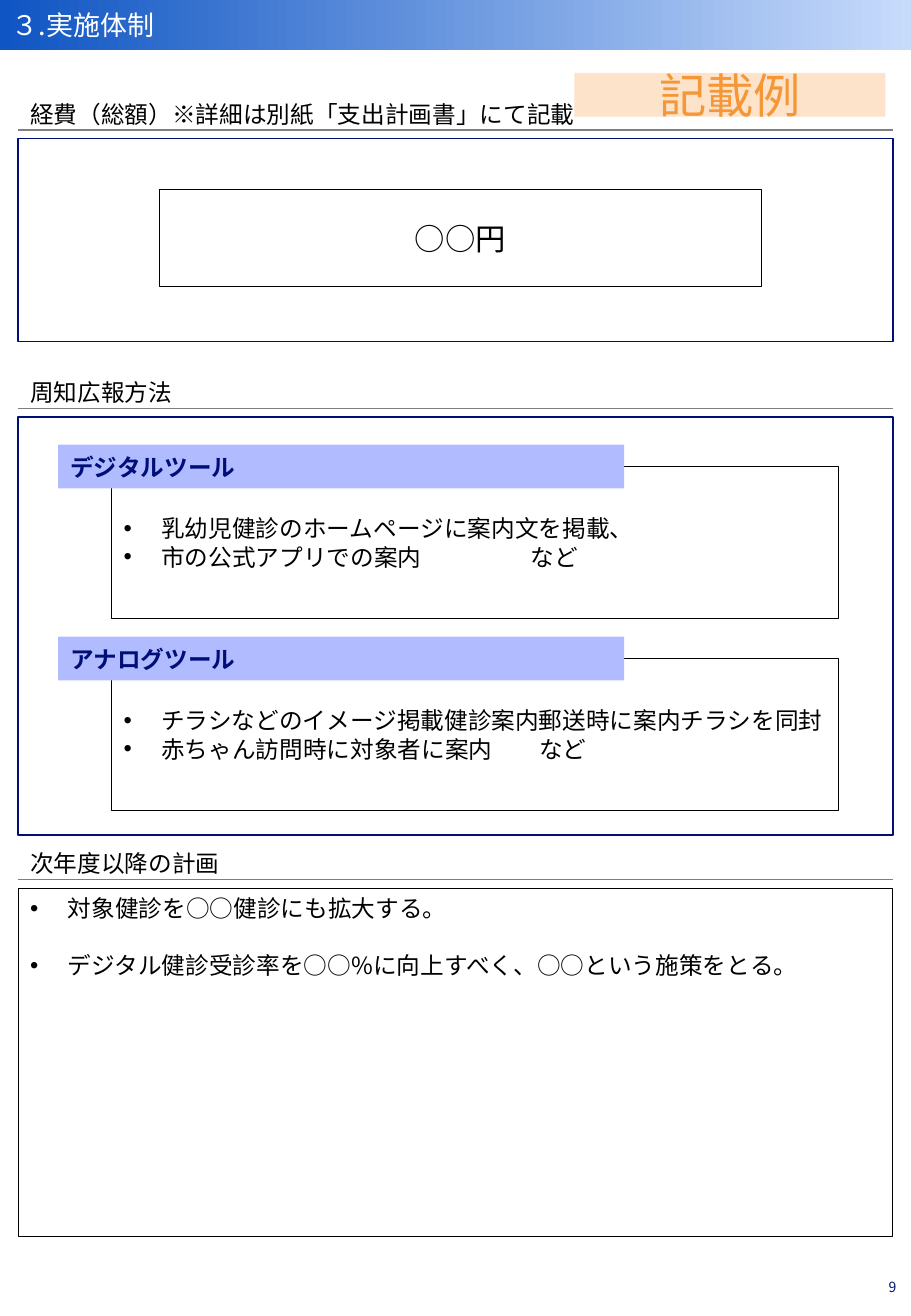
from dataclasses import dataclass

from lxml.etree import SubElement
from pptx import Presentation
from pptx.dml.color import RGBColor
from pptx.enum.shapes import MSO_CONNECTOR as Connector, MSO_SHAPE as Shape
from pptx.enum.text import MSO_ANCHOR as Anchor, PP_ALIGN as Align
from pptx.oxml.ns import qn
from pptx.util import Inches, Pt


@dataclass(frozen=True)
class Theme:
    font: str = "Noto Sans CJK JP"
    black: str = "000000"
    white: str = "FFFFFF"
    navy: str = "000F78"
    gray: str = "7F7F7F"
    lavender: str = "B1BBFF"
    orange: str = "F59637"
    peach: str = "F9C087"
    title_light: str = "C7DBFB"
    title_dark: str = "0F55C3"
    page_size: float = 8.3
    body_size: float = 14
    title_size: float = 16
    amount_size: float = 18
    stamp_size: float = 28


class PlanSlide:
    def __init__(self, presentation, theme):
        self.theme = theme
        self.slide = presentation.slides.add_slide(presentation.slide_layouts[6])

    def fill_text(self, shape, lines, size=None, color=None, bold=False,
                  align=Align.LEFT, anchor=Anchor.MIDDLE, bullet_tab=None, gap=0):
        """Fill a shape with text; bullet_tab makes the lines a bulleted list."""
        frame = shape.text_frame
        frame.word_wrap = True
        frame.vertical_anchor = anchor
        frame.text = "\n".join(lines)
        for index, paragraph in enumerate(frame.paragraphs):
            paragraph.alignment = align
            if index and gap:
                paragraph.space_before = Pt(gap)
            if bullet_tab is not None:
                self.add_bullet(paragraph, bullet_tab)
            for run in paragraph.runs:
                run.font.size = Pt(size or self.theme.body_size)
                run.font.bold = bold
                run.font.color.rgb = RGBColor.from_string(color or self.theme.black)
                run.font.name = self.theme.font
                SubElement(run.font._element, qn("a:ea"), typeface=self.theme.font)
        return frame

    def add_bullet(self, paragraph, tab):
        properties = paragraph._p.get_or_add_pPr()
        properties.set("marL", str(Inches(0.31)))
        properties.set("indent", str(-Inches(0.31)))
        SubElement(properties, qn("a:buFont"), typeface="Arial")
        SubElement(properties, qn("a:buChar"), char="•")
        if tab:
            tabs = SubElement(properties, qn("a:tabLst"))
            SubElement(tabs, qn("a:tab"), pos=str(Inches(tab)), algn="l")

    def box(self, left, top, width, height, fill=None, line=None, weight=0.5):
        shape = self.slide.shapes.add_shape(
            Shape.RECTANGLE, Inches(left), Inches(top), Inches(width), Inches(height))
        shape.shadow.inherit = False
        if fill:
            shape.fill.solid()
            shape.fill.fore_color.rgb = RGBColor.from_string(fill)
        else:
            shape.fill.background()
        if line:
            shape.line.color.rgb = RGBColor.from_string(line)
            shape.line.width = Pt(weight)
        else:
            shape.line.fill.background()
        return shape

    def label(self, left, top, width, height, text, **style):
        shape = self.slide.shapes.add_textbox(
            Inches(left), Inches(top), Inches(width), Inches(height))
        return self.fill_text(shape, [text], **style)

    def title_bar(self, text):
        bar = self.box(0, 0, 7.5, 0.41)
        bar.fill.gradient()
        bar.fill.gradient_angle = 180
        colors = (self.theme.title_light, self.theme.title_dark)
        for stop, color in zip(bar.fill.gradient_stops, colors):
            stop.color.rgb = RGBColor.from_string(color)
        self.fill_text(bar, [text], self.theme.title_size, self.theme.white)

    def heading(self, top, text):
        """Section heading with a rule beneath it."""
        rule = self.slide.shapes.add_connector(
            Connector.STRAIGHT, Inches(0.15), Inches(top + 0.3),
            Inches(7.35), Inches(top + 0.3))
        rule.line.color.rgb = RGBColor.from_string(self.theme.gray)
        rule.line.width = Pt(0.75)
        SubElement(rule._element.spPr, qn("a:effectLst"))
        self.label(0.15, top, 6.43, 0.34, text, anchor=Anchor.TOP)

    def tool_panel(self, top, name, lines, tab):
        """Bulleted box with a coloured name tag over its upper edge."""
        body = self.box(0.92, top + 0.18, 5.98, 1.25, line=self.theme.black)
        self.fill_text(body, lines, bullet_tab=tab)
        tag = self.box(0.48, top, 4.66, 0.36, fill=self.theme.lavender)
        self.fill_text(tag, [name], color=self.theme.navy, bold=True)

    def stamp(self, text):
        shape = self.box(4.73, 0.6, 2.56, 0.36, fill=self.theme.peach)
        color = shape._element.spPr.find(qn("a:solidFill"))[0]
        SubElement(color, qn("a:alpha"), val="44000")
        frame = self.fill_text(shape, [text], self.theme.stamp_size,
                               self.theme.orange, align=Align.CENTER)
        frame.word_wrap = False


def main():
    presentation = Presentation()
    presentation.slide_width = Inches(7.5)
    presentation.slide_height = Inches(10.83)
    theme = Theme()
    plan = PlanSlide(presentation, theme)

    # Title and page number
    plan.title_bar("３.実施体制")
    page = plan.label(7.13, 10.46, 0.37, 0.27, "9", size=theme.page_size,
                      color=theme.navy, align=Align.RIGHT)
    page.margin_left = page.margin_top = page.margin_bottom = 0
    page.margin_right = Inches(0.12)

    # Total cost
    plan.heading(0.77, "経費（総額）※詳細は別紙「支出計画書」にて記載")
    plan.box(0.15, 1.14, 7.2, 1.67, line=theme.navy, weight=1)
    amount = plan.box(1.31, 1.56, 4.96, 0.8, line=theme.black)
    plan.fill_text(amount, ["○○円"], theme.amount_size, align=Align.CENTER)

    # Publicity tools
    plan.heading(3.06, "周知広報方法")
    plan.box(0.15, 3.43, 7.2, 3.44, line=theme.navy, weight=1)
    tools = [
        ("デジタルツール",
         ["乳幼児健診のホームページに案内文を掲載、", "市の公式アプリでの案内\tなど"], 3.35),
        ("アナログツール",
         ["チラシなどのイメージ掲載健診案内郵送時に案内チラシを同封",
          "赤ちゃん訪問時に対象者に案内\tなど"], 3.42),
    ]
    for index, (name, lines, tab) in enumerate(tools):
        plan.tool_panel(3.66 + 1.58 * index, name, lines, tab)

    # Plans for the following years
    plan.heading(6.94, "次年度以降の計画")
    future = plan.box(0.15, 7.31, 7.2, 2.87, line=theme.black)
    plan.fill_text(future, ["対象健診を○○健診にも拡大する。",
                            "デジタル健診受診率を○○%に向上すべく、○○という施策をとる。"],
                   anchor=Anchor.TOP, bullet_tab=0, gap=17)

    # Sample mark
    plan.stamp("記載例")
    presentation.save("out.pptx")


if __name__ == "__main__":
    main()
